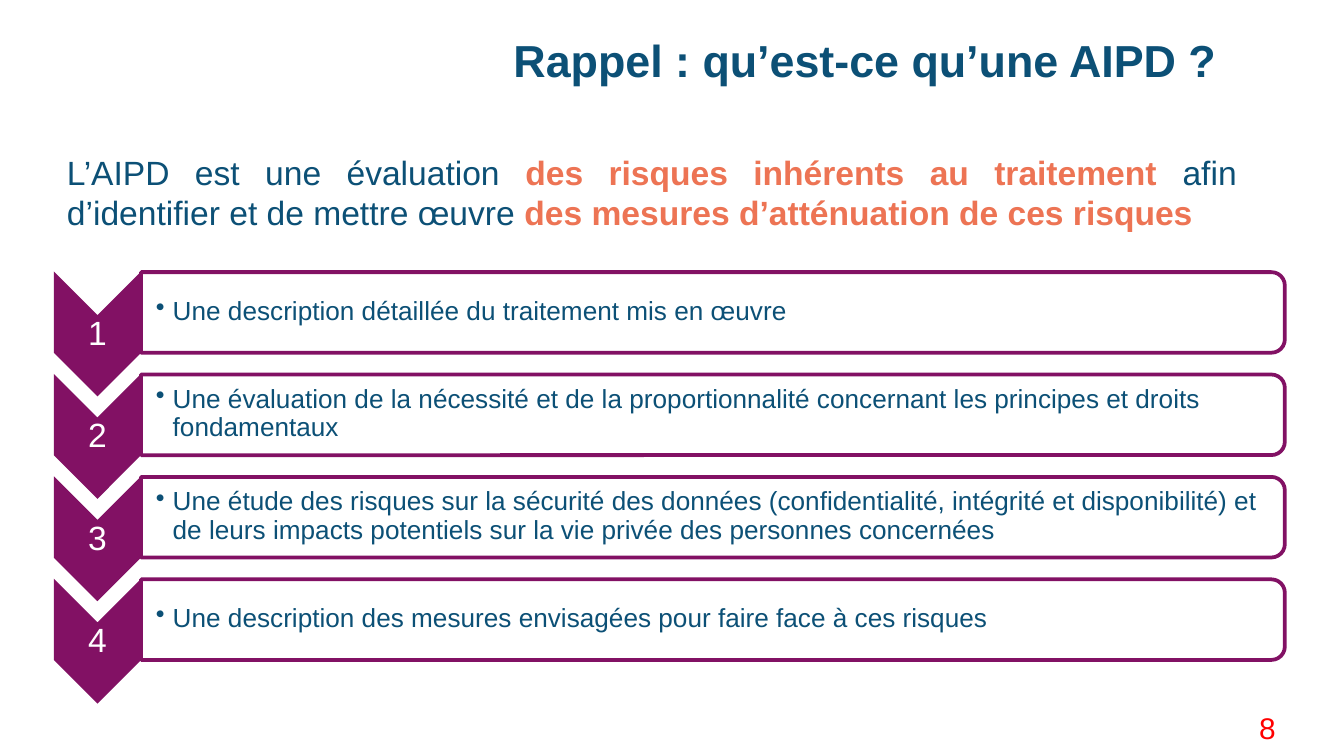
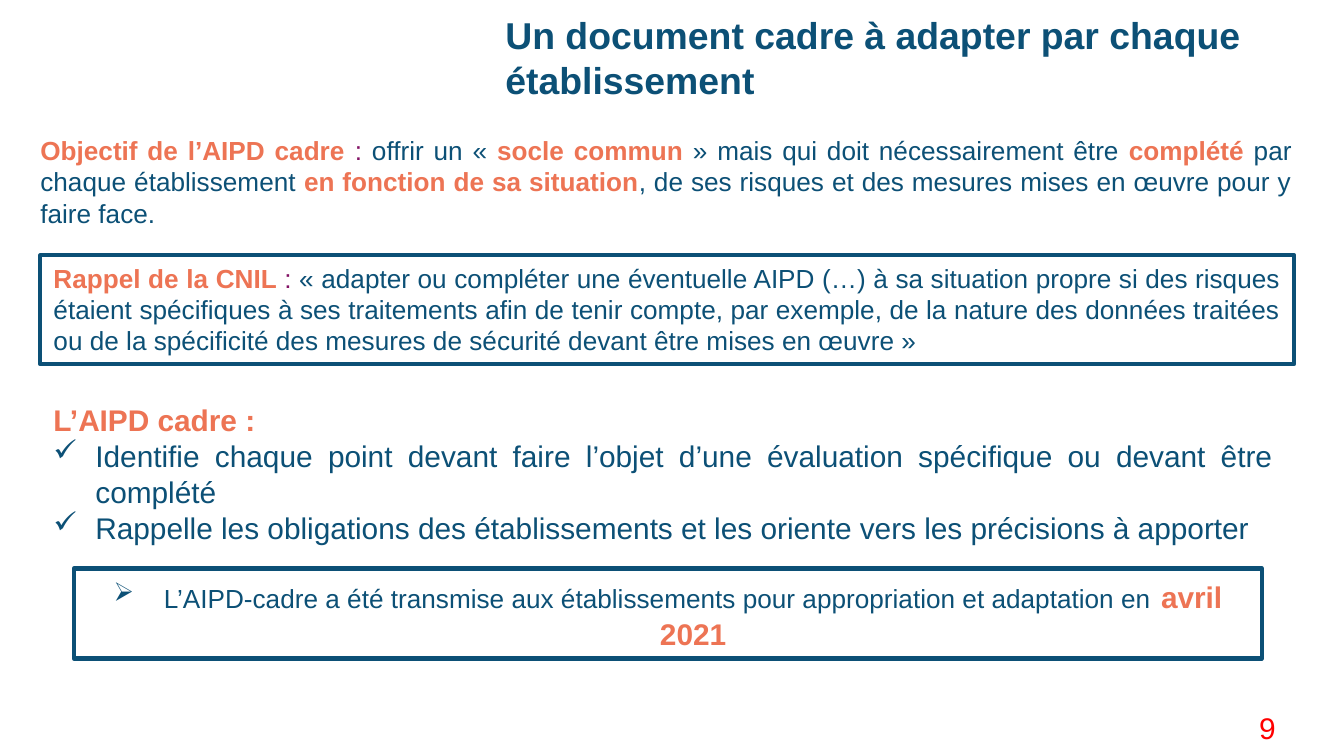
from dataclasses import dataclass
from typing import NamedTuple, Optional

from lxml import etree
from pptx import Presentation
from pptx.dml.color import RGBColor
from pptx.enum.shapes import MSO_SHAPE
from pptx.enum.text import MSO_ANCHOR, MSO_AUTO_SIZE, PP_ALIGN
from pptx.oxml.ns import qn
from pptx.util import Inches, Pt

LEFT, CENTER, RIGHT, JUSTIFY = PP_ALIGN.LEFT, PP_ALIGN.CENTER, PP_ALIGN.RIGHT, PP_ALIGN.JUSTIFY
TOP, MIDDLE = MSO_ANCHOR.TOP, MSO_ANCHOR.MIDDLE
FIXED_SIZE = MSO_AUTO_SIZE.NONE
CHEVRON, RECTANGLE = MSO_SHAPE.CHEVRON, MSO_SHAPE.RECTANGLE
ROUNDED_SIDE = MSO_SHAPE.ROUND_2_SAME_RECTANGLE

FONT = "Arial"
COLORS = {"blue": "0C5076", "coral": "ED7454", "plum": "821164",
          "red": "FF0000", "white": "FFFFFF", "black": "000000"}

# The slide is a grid of square cells.
CELL = Inches(0.1)
COLUMNS, ROWS = 100, 56.25
TITLE_ONLY, TITLE_AND_BODY = 5, 1


class Frame(NamedTuple):
    """Place on the grid, in columns and rows."""
    col: float
    row: float
    cols: float
    rows: float

    def down(self, rows: float) -> "Frame":
        return self._replace(row=self.row + rows)

    def turned(self) -> "Frame":
        """Frame that covers this one after a quarter turn."""
        shift = (self.cols - self.rows) / 2
        return Frame(self.col + shift, self.row - shift, self.rows, self.cols)

    def lengths(self) -> list[int]:
        return [round(cells * CELL) for cells in self]


class Span(NamedTuple):
    text: str
    color: str = "blue"
    bold: bool = False
    size: Optional[float] = None


@dataclass
class Para:
    spans: list[Span]
    size: float
    align: PP_ALIGN = LEFT
    bullet: str = ""
    indent: float = 0
    spacing: float = 1.0
    after: float = 0
    level: int = 0


class Margins(NamedTuple):
    left: float = 1
    top: float = 0.5
    right: float = 1
    bottom: float = 0.5


NO_MARGINS = Margins(0, 0, 0, 0)
THIN_MARGINS = Margins(0.1, 0.1, 0.1, 0.1)
ITEM_MARGINS = Margins(1.1, 0.1, 0.1, 0.1)

# Process steps: first frames, then one step every STEP_ROWS.
STEP_ROWS = 7.62
ARROW = Frame(4, 20.2, 6.5, 9.3)
NUMBER = Frame(4, 23.5, 6.5, 2.8)
BAR = Frame(10.5, 20.25, 85.1, 6)
ITEM = Frame(10.5, 20.5, 84.8, 5.4)
PAGE_NUMBER = Frame(83.1, 52.3, 12.8, 3.9)

STEPS = [
    "Une description détaillée du traitement mis en œuvre",
    "Une évaluation de la nécessité et de la proportionnalité concernant les principes "
    "et droits fondamentaux",
    "Une étude des risques sur la sécurité des données (confidentialité, intégrité et "
    "disponibilité) et de leurs impacts potentiels sur la vie privée des personnes concernées",
    "Une description des mesures envisagées pour faire face à ces risques",
]
DEFINITION = [
    Span("L’AIPD est une évaluation "),
    Span("des risques inhérents au traitement ", "coral", True),
    Span("afin d’identifier et de mettre œuvre "),
    Span("des mesures d’atténuation de ces risques", "coral", True),
]
OBJECTIVE = [
    Span("Objectif de l’AIPD cadre ", "coral", True),
    Span(": ", "plum"),
    Span("offrir un «"),
    Span(" socle commun ", "coral", True),
    Span("» mais qui doit nécessairement être "),
    Span("complété ", "coral", True),
    Span("par chaque établissement "),
    Span("en fonction de sa situation", "coral", True),
    Span(", de ses risques et des mesures mises en œuvre pour y faire face."),
]
REMINDER = [
    Span("Rappel de la CNIL ", "coral", True),
    Span(": ", "plum"),
    Span("« adapter ou compléter une éventuelle AIPD (…) à sa situation propre si des "
         "risques étaient spécifiques à ses traitements afin de tenir compte, par exemple, "
         "de la nature des données traitées ou de la spécificité des mesures de sécurité "
         "devant être mises en œuvre »"),
]
ROLES = [
    "Identifie chaque point devant faire l’objet d’une évaluation spécifique ou devant "
    "être complété",
    "Rappelle les obligations des établissements et les oriente vers les précisions à apporter",
]
DELIVERY = [
    Span("L’AIPD-cadre a été transmise aux établissements pour appropriation et "
         "adaptation en"),
    Span(" ", "black", size=18),
    Span("avril 2021", "coral", True, 16),
]


def rgb(name: str) -> RGBColor:
    return RGBColor.from_string(COLORS[name])


def apply(target, formats: dict) -> None:
    for attribute, value in formats.items():
        setattr(target, attribute, value)


def place(shape, frame: Frame) -> None:
    apply(shape, dict(zip(("left", "top", "width", "height"), frame.lengths())))


def set_bullet(paragraph, para: Para) -> None:
    properties = paragraph._p.get_or_add_pPr()
    indent = round(para.indent * CELL)
    properties.set("marL", str(indent))
    properties.set("indent", str(-indent))
    if para.bullet:
        etree.SubElement(properties, qn("a:buChar")).set("char", para.bullet)
    else:
        etree.SubElement(properties, qn("a:buNone"))


def write(shape, paras: list[Para], margins: Margins = Margins(), anchor=TOP) -> None:
    frame = shape.text_frame
    apply(frame, {"word_wrap": True, "auto_size": FIXED_SIZE, "vertical_anchor": anchor})
    apply(frame, {f"margin_{side}": round(cells * CELL)
                  for side, cells in margins._asdict().items()})
    for index, para in enumerate(paras):
        paragraph = frame.add_paragraph() if index else frame.paragraphs[0]
        set_bullet(paragraph, para)
        apply(paragraph, {"alignment": para.align, "level": para.level,
                          "line_spacing": para.spacing, "space_before": Pt(0),
                          "space_after": Pt(para.after)})
        for span in para.spans:
            run = paragraph.add_run()
            run.text = span.text
            apply(run.font, {"name": FONT, "size": Pt(span.size or para.size),
                             "bold": span.bold})
            run.font.color.rgb = rgb(span.color)


def add_text(slide, frame: Frame, paras: list[Para], margins: Margins = Margins(),
             anchor=TOP) -> None:
    write(slide.shapes.add_textbox(*frame.lengths()), paras, margins, anchor)


def add_panel(slide, kind, frame: Frame, fill: str = "", line: str = "",
              line_width: float = 2.25, rotation: float = 0):
    panel = slide.shapes.add_shape(kind, *frame.lengths())
    panel.shadow.inherit = False
    panel.rotation = rotation
    if fill:
        panel.fill.solid()
        panel.fill.fore_color.rgb = rgb(fill)
    else:
        panel.fill.background()
    if line:
        panel.line.color.rgb = rgb(line)
        panel.line.width = Pt(line_width)
    else:
        panel.line.fill.background()
    return panel


def set_opacity(shape, percent: int) -> None:
    color = shape._element.spPr.find(qn("a:solidFill")).find(qn("a:srgbClr"))
    etree.SubElement(color, qn("a:alpha")).set("val", str(percent * 1000))


def start_slide(deck, layout: int, number: int, title: str, frame: Frame,
                size: float, margins: Margins, spacing: float = 1.0):
    """Add a slide with its title and page number."""
    slide = deck.slides.add_slide(deck.slide_layouts[layout])
    place(slide.shapes.title, frame)
    write(slide.shapes.title, [Para([Span(title, bold=True)], size, spacing=spacing)], margins)
    add_text(slide, PAGE_NUMBER, [Para([Span(str(number), "red")], 16, RIGHT)])
    return slide


def add_step(slide, index: int, text: str) -> None:
    drop = index * STEP_ROWS
    add_panel(slide, CHEVRON, ARROW.down(drop).turned(), fill="plum", rotation=90)
    add_text(slide, NUMBER.down(drop),
             [Para([Span(str(index + 1), "white")], 18, CENTER, spacing=0.9)],
             THIN_MARGINS, MIDDLE)
    bar = add_panel(slide, ROUNDED_SIDE, BAR.down(drop).turned(), fill="white",
                    line="plum", line_width=2, rotation=90)
    set_opacity(bar, 90)
    add_text(slide, ITEM.down(drop),
             [Para([Span(text)], 14, bullet="•", indent=1.25, spacing=0.9, level=1)],
             ITEM_MARGINS, MIDDLE)


def build_definition(deck) -> None:
    slide = start_slide(deck, TITLE_ONLY, 8, "Rappel : qu’est-ce qu’une AIPD ?",
                        Frame(38.2, 2.9, 59.6, 3.1), 24, NO_MARGINS, 0.9)
    for index, text in enumerate(STEPS):
        add_step(slide, index, text)
    add_text(slide, Frame(4, 10.8, 89, 7.1), [Para(DEFINITION, 18, JUSTIFY)])


def build_framework(deck) -> None:
    slide = start_slide(deck, TITLE_AND_BODY, 9,
                        "Un document cadre à adapter par chaque établissement",
                        Frame(36.6, 0.4, 63.4, 7.7), 20, Margins())
    objective = slide.placeholders[1]
    place(objective, Frame(3, 10, 93.1, 8.3))
    write(objective, [Para(OBJECTIVE, 14, JUSTIFY, after=5)], NO_MARGINS)

    reminder = add_panel(slide, RECTANGLE, Frame(3, 19, 93.3, 8.1), line="blue")
    write(reminder, [Para(REMINDER, 14, JUSTIFY)])

    heading = Para([Span("L’AIPD cadre :", "coral", True)], 16)
    roles = [Para([Span(role)], 16, JUSTIFY, "✓", 3.12) for role in ROLES]
    add_text(slide, Frame(3, 29.4, 92.7, 14.8), [heading, *roles])

    delivery = add_panel(slide, RECTANGLE, Frame(5.5, 42.3, 88.4, 6.7), line="blue")
    write(delivery, [Para(DELIVERY, 14, CENTER, "➢", 3.75)])


def main() -> None:
    deck = Presentation()
    apply(deck, {"slide_width": round(COLUMNS * CELL), "slide_height": round(ROWS * CELL)})
    build_definition(deck)
    build_framework(deck)
    deck.save("out.pptx")


if __name__ == "__main__":
    main()
